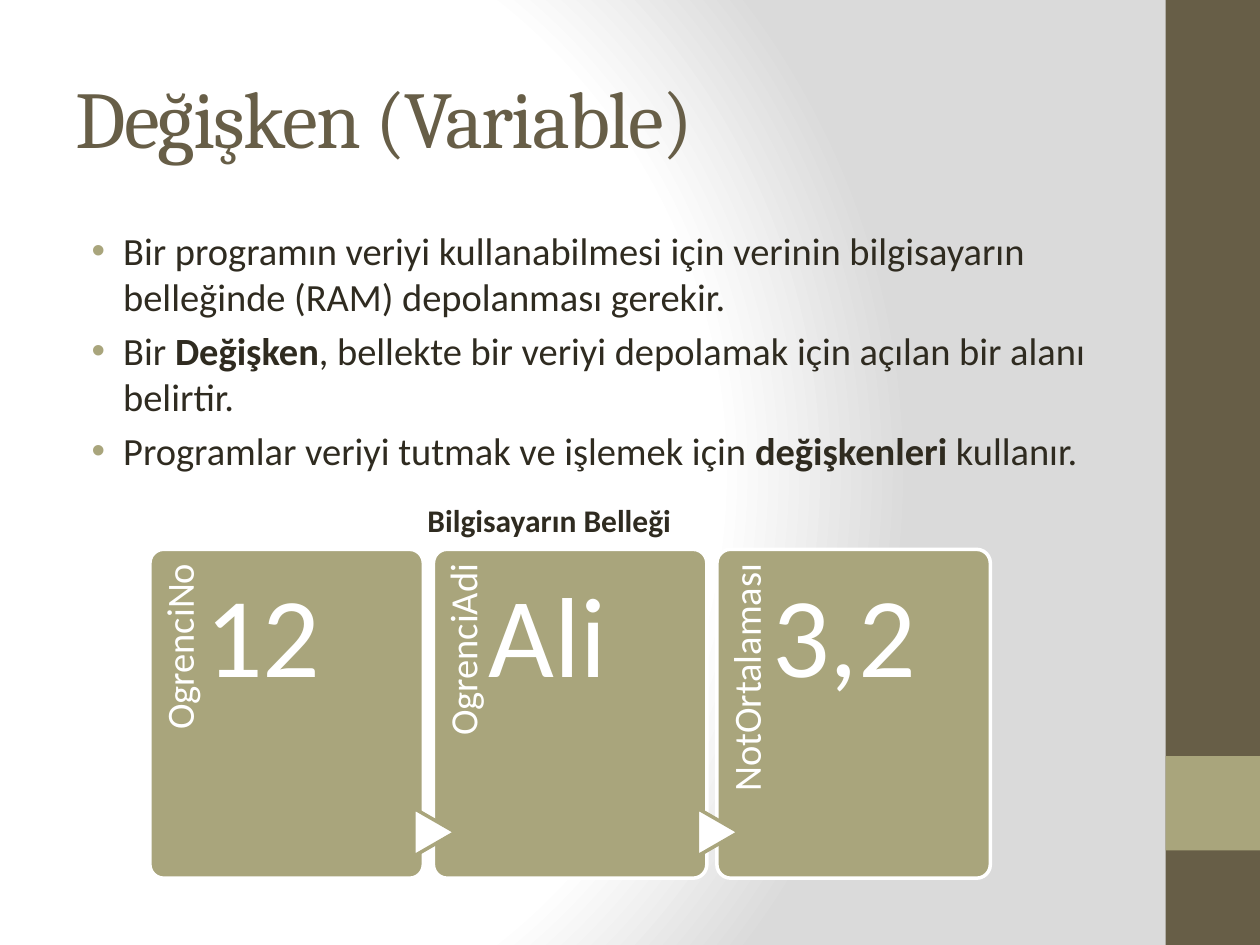
"""Build the slide that explains variables as labelled cells of computer memory."""
from dataclasses import dataclass

from pptx import Presentation
from pptx.dml.color import RGBColor
from pptx.enum.shapes import MSO_SHAPE as Shape
from pptx.enum.text import MSO_ANCHOR as Anchor, MSO_AUTO_SIZE as AutoSize, PP_ALIGN as Align
from pptx.oxml import parse_xml
from pptx.oxml.ns import nsdecls
from pptx.util import Inches, Pt

COLUMNS, ROWS = 40, 30
WIDTH, HEIGHT = Inches(10), Inches(7.5)
COLORS = {"brown": "675E47", "olive": "A9A57C", "ink": "2F2B20", "white": "FFFFFF", "grey": "DADADA"}
PITCH = 9


@dataclass(frozen=True)
class Area:
    column: float
    row: float
    columns: float
    rows: float

    def shifted(self, columns: float) -> "Area":
        return Area(self.column + columns, self.row, self.columns, self.rows)

    def lengths(self) -> tuple[int, ...]:
        across, down = WIDTH / COLUMNS, HEIGHT / ROWS
        return (round(self.column * across), round(self.row * down),
                round(self.columns * across), round(self.rows * down))


@dataclass(frozen=True)
class Variable:
    name: str
    value: str


@dataclass(frozen=True)
class Style:
    size: float
    color: str
    font: str = "Calibri"
    bold: bool = False


TITLE = Area(2, 1.2, 33.32, 5)
BODY = Area(2, 7, 33.32, 21)
CAPTION = Area(12.76, 15.72, 9.36, 1.6)
SIDEBAR = Area(37, 0, 3, 30)
ACCENT = Area(37, 24, 3, 3)
CELL = Area(4.76, 17.44, 8.68, 10.44)
NAME = Area(1.36, 20.88, 8.56, 1.72)
VALUE = Area(6.52, 17.44, 6.48, 10.44)
ARROW = Area(4.04, 25.76, 1.52, 1.32)

VARIABLES = [Variable("OgrenciNo", "12"), Variable("OgrenciAdi", "Ali"), Variable("NotOrtalaması", "3,2")]
BULLETS = [
    [("Bir programın veriyi kullanabilmesi için verinin bilgisayarın belleğinde (RAM) depolanması gerekir.", False)],
    [("Bir ", False), ("Değişken", True),
     (", bellekte bir veriyi depolamak için açılan bir alanı belirtir.", False)],
    [("Programlar veriyi tutmak ve işlemek için ", False), ("değişkenleri", True), (" kullanır.", False)],
]


def rgb(name: str) -> RGBColor:
    return RGBColor.from_string(COLORS[name])


def add_span(para, text: str, style: Style):
    span = para.add_run()
    span.text = text
    span.font.name, span.font.size, span.font.bold = style.font, Pt(style.size), style.bold
    span.font.color.rgb = rgb(style.color)
    return span


def paint_background(page) -> None:
    stops = "".join(f'<a:gs pos="{place * 1000}"><a:srgbClr val="{COLORS[color]}"/></a:gs>'
                    for place, color in [(0, "white"), (75, "white"), (100, "grey")])
    background = parse_xml(
        f'<p:bg {nsdecls("p", "a")}><p:bgPr><a:gradFill rotWithShape="1"><a:gsLst>{stops}</a:gsLst>'
        '<a:path path="circle"><a:fillToRect l="20000" t="50000" r="100000" b="50000"/></a:path>'
        '</a:gradFill><a:effectLst/></p:bgPr></p:bg>')
    page.element.cSld.insert(0, background)


def add_block(page, kind: Shape, area: Area, fill: str, line: str | None = None):
    block = page.shapes.add_shape(kind, *area.lengths())
    block.shadow.inherit = False
    block.fill.solid()
    block.fill.fore_color.rgb = rgb(fill)
    if line:
        block.line.color.rgb, block.line.width = rgb(line), Pt(2)
    else:
        block.line.fill.background()
    return block


def add_text(page, area: Area, text: str, style: Style, align: Align, insets: tuple | None = None):
    box = page.shapes.add_textbox(*area.lengths())
    frame = box.text_frame
    frame.word_wrap = True
    para = frame.paragraphs[0]
    para.alignment = align
    if insets:
        frame.margin_left, frame.margin_top, frame.margin_right, frame.margin_bottom = map(Inches, insets)
        para.line_spacing = 0.9
    add_span(para, text, style)
    return box


def format_title(page) -> None:
    title = page.shapes.title
    title.left, title.top, title.width, title.height = TITLE.lengths()
    frame = title.text_frame
    frame.auto_size, frame.vertical_anchor = AutoSize.NONE, Anchor.MIDDLE
    para = frame.paragraphs[0]
    para.alignment = Align.LEFT
    span = add_span(para, "Değişken (Variable)", Style(46, "brown", "Cambria"))
    span.font._element.set("spc", "-100")


def add_bullets(page) -> None:
    frame = page.shapes.add_textbox(*BODY.lengths()).text_frame
    frame.word_wrap = True
    for index, parts in enumerate(BULLETS):
        para = frame.add_paragraph() if index else frame.paragraphs[0]
        para.space_before = Pt(4.4)
        properties = para._p.get_or_add_pPr()
        properties.set("marL", str(Inches(0.38)))
        properties.set("indent", str(Inches(-0.25)))
        for mark in (f'<a:buClr {nsdecls("a")}><a:srgbClr val="{COLORS["olive"]}"/></a:buClr>',
                     f'<a:buFont {nsdecls("a")} typeface="Arial"/>',
                     f'<a:buChar {nsdecls("a")} char="•"/>'):
            properties.append(parse_xml(mark))
        for text, bold in parts:
            add_span(para, text, Style(22, "ink", bold=bold))


def add_variable(page, index: int, variable: Variable) -> None:
    shift = index * PITCH
    cell = add_block(page, Shape.ROUNDED_RECTANGLE, CELL.shifted(shift), "olive", "white")
    cell.adjustments[0] = 0.05
    name = add_text(page, NAME.shifted(shift), variable.name, Style(22, "white"), Align.RIGHT, (0, 0.08, 0.11, 0))
    name.rotation = 270
    if index:
        arrow = add_block(page, Shape.FLOWCHART_EXTRACT, ARROW.shifted(shift), "white", "olive")
        arrow.rotation = 90
    add_text(page, VALUE.shifted(shift), variable.value, Style(65, "white"), Align.LEFT, (0, 0.24, 0, 0))


def main() -> None:
    deck = Presentation()
    deck.slide_width, deck.slide_height = WIDTH, HEIGHT
    page = deck.slides.add_slide(deck.slide_layouts[5])
    paint_background(page)
    add_block(page, Shape.RECTANGLE, SIDEBAR, "brown")
    add_block(page, Shape.RECTANGLE, ACCENT, "olive")
    format_title(page)
    add_bullets(page)
    for index, variable in enumerate(VARIABLES):
        add_variable(page, index, variable)
    add_text(page, CAPTION, "Bilgisayarın Belleği", Style(18, "ink", bold=True), Align.CENTER)
    deck.save("out.pptx")


if __name__ == "__main__":
    main()
